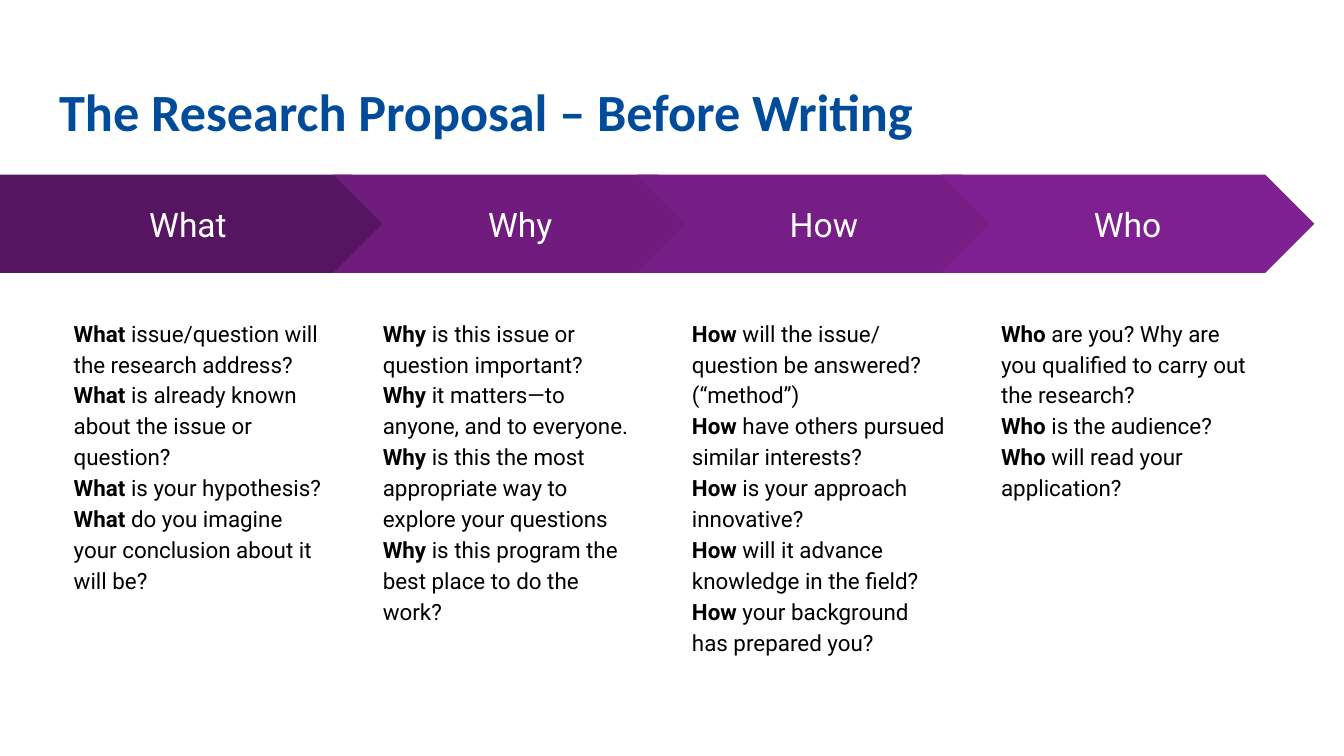
"""Build the slide on what to ask before writing a research proposal."""
from pptx import Presentation
from pptx.dml.color import RGBColor
from pptx.enum.shapes import MSO_SHAPE
from pptx.enum.text import MSO_ANCHOR, MSO_AUTO_SIZE, PP_ALIGN
from pptx.util import Inches, Pt


def style(font, size, name, color):
    font.size, font.name = Pt(size), name
    font.color.rgb = RGBColor.from_string(color)


def setup(frame, anchor):
    frame.word_wrap = True
    frame.auto_size = MSO_AUTO_SIZE.NONE
    frame.vertical_anchor = anchor
    frame.margin_left = frame.margin_right = Inches(0.1)
    frame.margin_top = frame.margin_bottom = Inches(0.1)


STEPS = [
    ("What", "551561", [
        "What issue/question will the research address?",
        "What is already known about the issue or question?",
        "What is your hypothesis?",
        "What do you imagine your conclusion about it will be?"]),
    ("Why", "701C7F", [
        "Why is this issue or question important?",
        "Why it matters—to anyone, and to everyone.",
        "Why is this the most appropriate way to explore your questions",
        "Why is this program the best place to do the work?"]),
    ("How", "761E86", [
        "How will the issue/ question be answered? (“method”)",
        "How have others pursued similar interests?",
        "How is your approach innovative?",
        "How will it advance knowledge in the field?",
        "How your background has prepared you?"]),
    ("Who", "7F2090", [
        "Who are you? Why are you qualified to carry out the research?",
        "Who is the audience? Who will read your application?"]),
]

deck = Presentation()
deck.slide_width, deck.slide_height = Inches(10), Inches(10 * 9 / 16)
slide = deck.slides.add_slide(deck.slide_layouts[5])

title = slide.shapes.title
title.left, title.top = Inches(0.34), Inches(0.49)
title.width, title.height = Inches(9.32), Inches(0.63)
setup(title.text_frame, MSO_ANCHOR.TOP)
title.text_frame.text = "The Research Proposal – Before Writing"
head = title.text_frame.paragraphs[0]
head.alignment = PP_ALIGN.LEFT
style(head.font, 28, "Calibri", "004C9B")
head.font.bold = True

for col, (key, fill, lines) in enumerate(STEPS):
    kind = MSO_SHAPE.CHEVRON if col else MSO_SHAPE.PENTAGON
    left, width = (0.22 + 2.26 * col, 2.78) if col else (0, 2.98)
    arrow = slide.shapes.add_shape(
        kind, Inches(left), Inches(1.3), Inches(width), Inches(0.73))
    arrow.adjustments[0] = 0.5
    arrow.shadow.inherit = False
    arrow.fill.solid()
    arrow.fill.fore_color.rgb = RGBColor.from_string(fill)
    arrow.line.fill.background()
    setup(arrow.text_frame, MSO_ANCHOR.MIDDLE)
    arrow.text_frame.text = key
    label = arrow.text_frame.paragraphs[0]
    label.alignment = PP_ALIGN.CENTER
    style(label.font, 18, "Roboto", "FFFFFF")

    box = slide.shapes.add_textbox(
        Inches(0.45 + 2.3 * col), Inches(2.25), Inches(2.08), Inches(2.86))
    frame = box.text_frame
    setup(frame, MSO_ANCHOR.TOP)
    for row, line in enumerate(lines):
        para = frame.add_paragraph() if row else frame.paragraphs[0]
        para.line_spacing = 1.15
        style(para.font, 12, "Roboto", "000000")
        for part in line.split(f"{key} ")[1:]:
            lead = para.add_run()
            lead.text = f"{key} "
            lead.font.bold = True
            para.add_run().text = part

deck.save("out.pptx")
